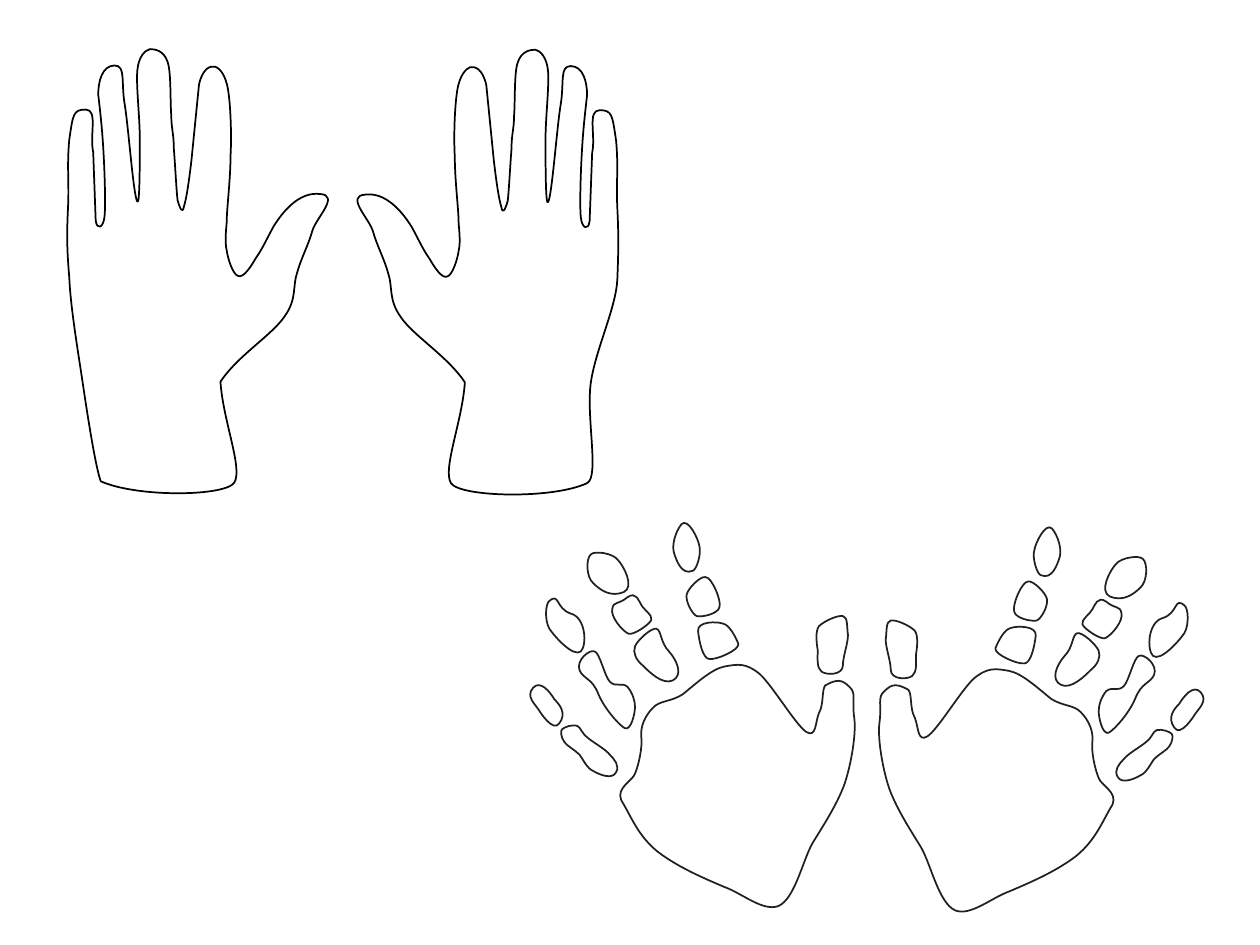
from dataclasses import dataclass

from pptx import Presentation
from pptx.dml.color import RGBColor as Color
from pptx.oxml.ns import qn
from pptx.oxml.xmlchemy import OxmlElement as Element
from pptx.shapes.autoshape import Shape
from pptx.slide import Slide
from pptx.util import Pt

GRID = 0.72  # points per grid unit: outlines are drawn on a 1000 x 750 grid

Point = tuple[float, float]
Curve = tuple[float, float, float, float, float, float]  # two handles, then the end


@dataclass
class Outline:
    start: Point
    curves: list[Curve]


@dataclass
class Pose:
    """Where an outline goes: mirrored if the sum of both x is given, then lowered."""
    mirror: float | None = None
    drop: float = 0

    def place(self, x: float, y: float) -> Point:
        across = x if self.mirror is None else self.mirror - x
        return Pt(across * GRID), Pt((y + self.drop) * GRID)


FINGERS = [
    (53, 197, 53, 185, 54, 165), (55, 145, 53, 132, 55, 111),
    (58, 91, 58, 87, 68, 87), (78, 87, 71, 107, 74, 121),
    (74, 121, 76, 175, 76, 175), (77, 183, 82, 181, 83, 172),
    (84, 162, 83, 134, 82, 118), (81, 100, 79, 84, 78, 75),
    (78, 65, 81, 52, 91, 52), (100, 52, 96, 65, 99, 83),
    (102, 101, 106, 156, 109, 160), (111, 164, 111, 128, 111, 110),
    (111, 93, 108, 68, 109, 56), (110, 45, 115, 40, 119, 39),
    (123, 39, 130, 40, 133, 49), (136, 57, 135, 80, 136, 92),
    (136, 102, 138, 106, 138, 118), (139, 130, 140, 151, 141, 159),
    (143, 166, 145, 170, 146, 164), (148, 158, 150, 144, 152, 127),
    (152, 127, 158, 67, 158, 67), (161, 54, 167, 52, 171, 53),
    (174, 54, 179, 59, 181, 71), (183, 83, 184, 107, 183, 124),
    (183, 142, 180, 166, 180, 175), (180, 179, 178, 191, 180, 199),
    (181, 206, 185, 218, 189, 219), (193, 221, 199, 212, 203, 205),
    (208, 198, 210, 193, 217, 180), (225, 167, 238, 152, 254, 154),
    (270, 155, 251, 173, 248, 183), (245, 194, 239, 205, 236, 216),
    (232, 227, 236, 237, 226, 251), (216, 266, 189, 282, 175, 303),
    (177, 334, 193, 372, 186, 383),
]
LEFT = Outline((80, 382), [
    (76, 371, 70, 333, 66, 306), (62, 279, 56, 244, 55, 220),
    *FINGERS, (179, 394, 109, 395, 80, 382)])
RIGHT = Outline((78, 383), [
    (68, 378, 79, 330, 75, 303), (71, 276, 55, 244, 54, 221),
    *FINGERS, (179, 394, 106, 396, 78, 383)])

PALM = Outline((678, 570), [
    (680, 584, 674, 615, 668, 628), (662, 642, 653, 656, 645, 669),
    (637, 683, 631, 713, 618, 719), (606, 724, 589, 709, 575, 704),
    (561, 698, 539, 689, 522, 676), (506, 663, 501, 648, 493, 635),
    (489, 625, 502, 620, 504, 614), (507, 607, 510, 593, 509, 585),
    (508, 577, 512, 568, 518, 562), (523, 556, 533, 557, 542, 551),
    (553, 542, 565, 531, 575, 529), (586, 527, 592, 526, 603, 535),
    (613, 544, 632, 576, 640, 581), (648, 586, 647, 573, 650, 566),
    (654, 559, 652, 548, 655, 544), (664, 539, 668, 539, 674, 545),
    (680, 550, 676, 556, 678, 570)])
THUMB = Outline((673, 504), [
    (672, 497, 673, 490, 669, 489), (665, 488, 654, 493, 650, 497),
    (647, 501, 648, 510, 649, 516), (649, 522, 648, 530, 652, 533),
    (656, 536, 669, 536, 669, 528), (669, 521, 673, 511, 673, 504)])
INDEX = [
    Outline((535, 439), [
        (537, 445, 541, 457, 550, 453), (553, 452, 557, 439, 555, 433),
        (554, 427, 546, 411, 541, 416), (536, 422, 533, 433, 535, 439)]),
    Outline((545, 472), [
        (544, 477, 549, 487, 553, 489), (558, 490, 570, 487, 571, 482),
        (573, 477, 565, 458, 560, 458), (556, 457, 546, 467, 545, 472)]),
    Outline((554, 501), [
        (555, 510, 558, 523, 563, 523), (568, 524, 587, 516, 586, 511),
        (584, 506, 579, 496, 574, 495), (569, 493, 553, 493, 554, 501)]),
]
MIDDLE = [
    Outline((471, 463), [
        (477, 469, 485, 474, 495, 470), (504, 466, 495, 449, 490, 444),
        (486, 439, 472, 437, 469, 440), (465, 443, 465, 458, 471, 463)]),
    Outline((510, 528), [
        (515, 533, 526, 544, 534, 540), (542, 536, 538, 525, 531, 517),
        (524, 510, 525, 500, 521, 499), (517, 498, 506, 508, 504, 513),
        (502, 518, 505, 524, 510, 528)]),
    Outline((499, 503), [
        (503, 504, 515, 496, 517, 492), (518, 488, 511, 484, 509, 480),
        (507, 477, 505, 469, 498, 474), (491, 480, 487, 477, 486, 483),
        (484, 489, 494, 501, 499, 503)]),
]
RING = [
    Outline((436, 499), [
        (440, 505, 455, 522, 461, 517), (466, 512, 465, 490, 453, 487),
        (441, 483, 444, 470, 436, 477), (433, 479, 432, 492, 436, 499)]),
    Outline((460, 532), [
        (463, 539, 470, 538, 475, 551), (480, 563, 492, 576, 496, 578),
        (501, 580, 504, 566, 504, 561), (504, 556, 502, 550, 498, 545),
        (493, 541, 489, 546, 484, 541), (480, 537, 476, 518, 472, 517),
        (468, 515, 457, 524, 460, 532)]),
]
LITTLE = [
    Outline((428, 564), [
        (428, 564, 439, 582, 444, 574), (450, 566, 444, 559, 440, 555),
        (437, 550, 429, 539, 423, 546), (417, 553, 425, 559, 428, 564)]),
    Outline((448, 589), [
        (450, 592, 456, 595, 460, 599), (463, 603, 466, 610, 471, 612),
        (476, 615, 486, 619, 489, 613), (492, 608, 488, 603, 484, 599),
        (481, 595, 472, 590, 467, 586), (462, 583, 461, 577, 458, 576),
        (454, 575, 448, 577, 446, 579), (445, 580, 445, 585, 448, 589)]),
]
PRINT = [PALM, THUMB, *INDEX, *MIDDLE, *RING, *LITTLE]


def paint(code: str) -> Color:
    return Color.from_string(code)


def bend(shape: Shape, curves: list[Curve], pose: Pose) -> None:
    """Make each straight segment a cubic curve by adding its two handles."""
    lines = list(shape._element.iter(qn("a:lnTo")))
    for line, (x1, y1, x2, y2, _, _) in zip(lines, curves):
        line.tag = qn("a:cubicBezTo")
        for index, handle in enumerate([(x1, y1), (x2, y2)]):
            x, y = pose.place(*handle)
            point = Element("a:pt")
            point.set("x", str(x - shape.left))
            point.set("y", str(y - shape.top))
            line.insert(index, point)


def draw(slide: Slide, outline: Outline, pose: Pose, ink: str) -> Shape:
    pen = slide.shapes.build_freeform(*pose.place(*outline.start))
    ends = [pose.place(*curve[4:]) for curve in outline.curves]
    pen.add_line_segments(ends, close=True)
    shape = pen.convert_to_shape()
    bend(shape, outline.curves, pose)
    shape.shadow.inherit = False
    shape.fill.solid()
    shape.fill.fore_color.rgb = paint("FFFFFF")
    shape.line.color.rgb = paint(ink)
    shape.line.width = Pt(1)
    return shape


def main() -> None:
    deck = Presentation()
    deck.slide_width, deck.slide_height = Pt(720), Pt(540)
    slide = deck.slides.add_slide(deck.slide_layouts[6])

    draw(slide, LEFT, Pose(), "010101")
    draw(slide, RIGHT, Pose(mirror=544, drop=0.5), "010101")
    for pose in (Pose(), Pose(mirror=1376, drop=3.5)):
        parts = [draw(slide, part, pose, "231F20") for part in PRINT]
        slide.shapes.add_group_shape(parts)

    deck.save("out.pptx")


if __name__ == "__main__":
    main()
